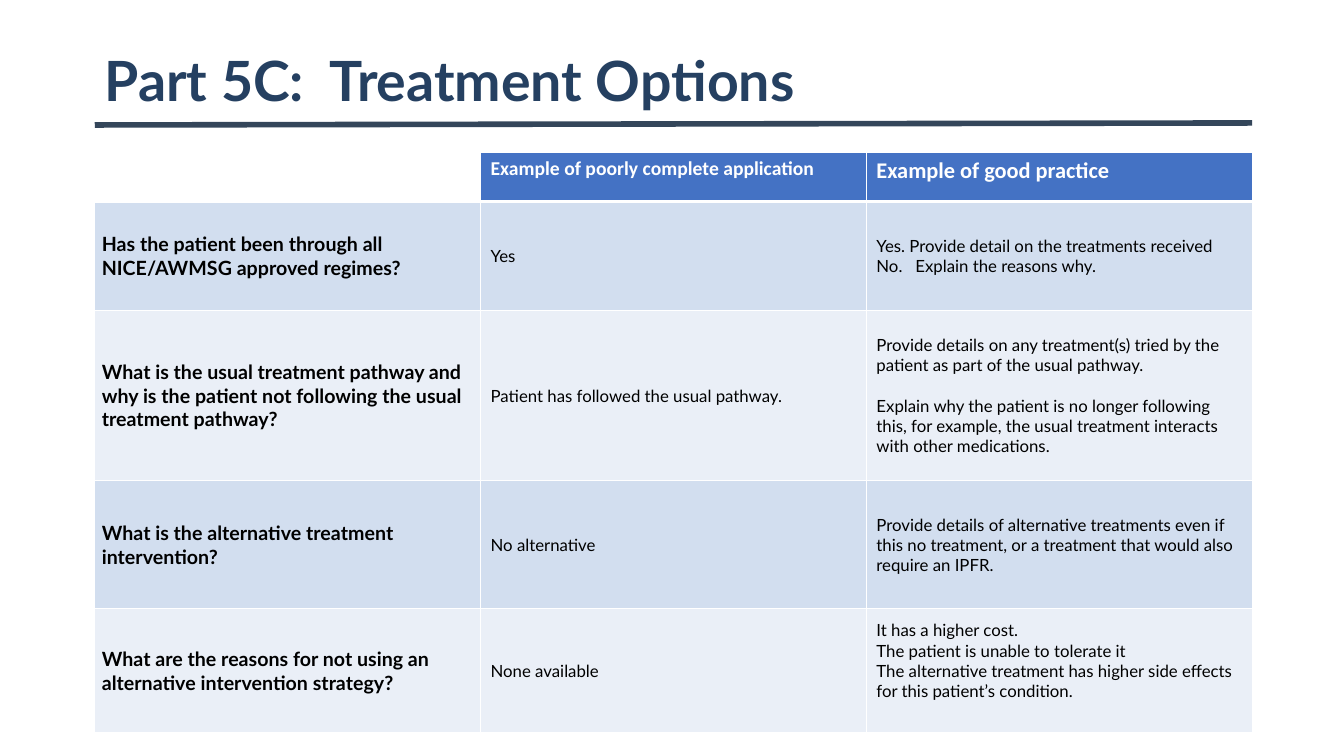
"""Build the Part 5C treatment options slide."""
from lxml.etree import SubElement
from pptx import Presentation
from pptx.dml.color import RGBColor
from pptx.enum.shapes import MSO_CONNECTOR
from pptx.enum.text import MSO_ANCHOR
from pptx.oxml.ns import qn
from pptx.util import Pt

PX = 9144
THEME = {
    "title": {"name": "Lato", "size": Pt(39.6), "bold": True, "color": "254061"},
    "poor": {"name": "Calibri", "size": Pt(14), "bold": True, "color": "FFFFFF"},
    "good": {"name": "Calibri", "size": Pt(16), "bold": True, "color": "FFFFFF"},
    "question": {"name": "Lato", "size": Pt(14), "bold": True, "color": "000000"},
    "answer": {"name": "Lato", "size": Pt(12), "bold": False, "color": "000000"},
    "rule": "34465A",
    "header": "4472C4",
    "bands": ["D2DEEF", "EAEFF7"],
    "border": "FFFFFF",
}
LEFT, WIDTH = 94, 1148
ROW_HEIGHTS = [49, 108, 169, 127, 123]
ROWS = [
    ["", "Example of poorly complete application", "Example of good practice"],
    [
        "Has the patient been through all NICE/AWMSG approved regimes?",
        "Yes",
        "Yes. Provide detail on the treatments received\nNo.   Explain the reasons why.",
    ],
    [
        "What is the usual treatment pathway and why is the patient not following the usual treatment pathway?",
        "Patient has followed the usual pathway.",
        "Provide details on any treatment(s) tried by the patient as part of the usual pathway.\n"
        "Explain why the patient is no longer following this, for example, "
        "the usual treatment interacts with other medications.",
    ],
    [
        "What is the alternative treatment intervention?",
        "No alternative",
        "Provide details of alternative treatments even if this no treatment, "
        "or a treatment that would also require an IPFR.",
    ],
    [
        "What are the reasons for not using an alternative intervention strategy?",
        "None available",
        "It has a higher cost.\nThe patient is unable to tolerate it\n"
        "The alternative treatment has higher side effects for this patient’s condition.",
    ],
]


def write(frame, text, style):
    for index, line in enumerate(text.split("\n")):
        para = frame.paragraphs[0] if index == 0 else frame.add_paragraph()
        span = para.add_run()
        span.text = line
        for key, value in THEME[style].items():
            if key == "color":
                span.font.color.rgb = RGBColor.from_string(value)
            else:
                setattr(span.font, key, value)


def add_borders(cell, bottom):
    properties = cell._tc.get_or_add_tcPr()
    for side, points in {"L": 1, "R": 1, "T": 1, "B": bottom}.items():
        edge = SubElement(properties, qn(f"a:ln{side}"), w=str(Pt(points)))
        SubElement(SubElement(edge, qn("a:solidFill")), qn("a:srgbClr"), val=THEME["border"])


deck = Presentation()
deck.slide_width, deck.slide_height = 1333 * PX, 750 * PX
page = deck.slides.add_slide(deck.slide_layouts[6])

rule = page.shapes.add_connector(
    MSO_CONNECTOR.STRAIGHT, LEFT * PX, 124 * PX, (LEFT + WIDTH) * PX, 122 * PX
)
rule.line.color.rgb = RGBColor.from_string(THEME["rule"])
rule.line.width = Pt(4)
SubElement(rule._element.spPr, qn("a:effectLst"))

title = page.shapes.add_textbox(LEFT * PX, 51 * PX, WIDTH * PX, 64 * PX).text_frame
title.word_wrap = True
title.vertical_anchor = MSO_ANCHOR.MIDDLE
write(title, "Part 5C:  Treatment Options", "title")
title.paragraphs[0].line_spacing = 0.9

table = page.shapes.add_table(
    len(ROWS), 3, LEFT * PX, 151 * PX, WIDTH * PX, sum(ROW_HEIGHTS) * PX
).table
table.first_row = table.horz_banding = False

for row, texts in enumerate(ROWS):
    table.rows[row].height = ROW_HEIGHTS[row] * PX
    for column, text in enumerate(texts):
        cell = table.cell(row, column)
        add_borders(cell, 3 if row == 0 else 1)
        if not text:
            cell.fill.background()
            continue
        color = THEME["bands"][(row - 1) % 2] if row else THEME["header"]
        cell.fill.solid()
        cell.fill.fore_color.rgb = RGBColor.from_string(color)
        if row:
            cell.vertical_anchor = MSO_ANCHOR.MIDDLE
            style = "answer" if column else "question"
        else:
            style = "poor" if column == 1 else "good"
        if style == "question":
            margins = {"left": 7, "right": 7, "top": 0, "bottom": 0}
            for side, length in margins.items():
                setattr(cell, f"margin_{side}", length * PX)
        write(cell.text_frame, text, style)

table.cell(2, 2).text_frame.paragraphs[1].space_before = Pt(14.4)
table.cell(4, 2).margin_bottom = 25 * PX

deck.save("out.pptx")
